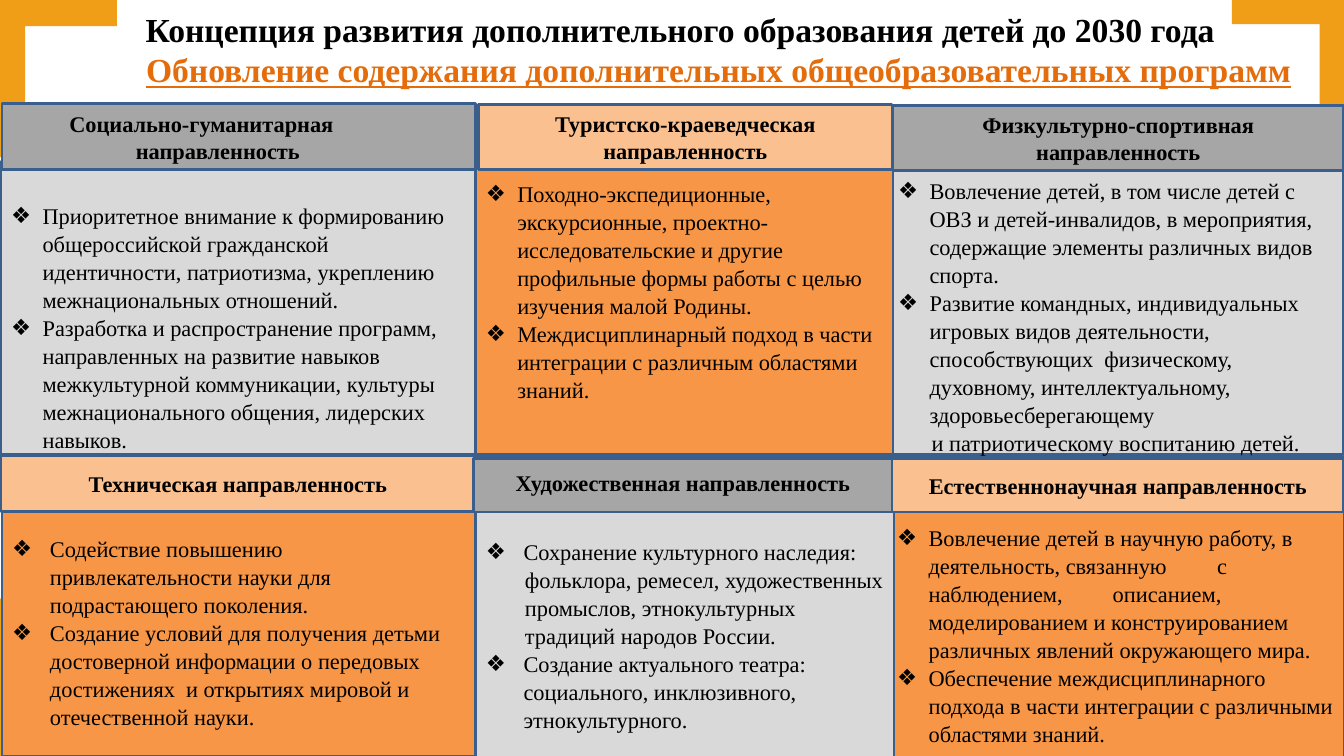
from copy import deepcopy
from dataclasses import dataclass

from lxml import etree
from pptx import Presentation
from pptx.dml.color import RGBColor
from pptx.enum import shapes as sh, text as tx
from pptx.oxml.ns import qn
from pptx.util import Pt


@dataclass(frozen=True)
class Theme:
    font: str = "Times New Roman"
    title_size: float = 24
    text_size: float = 16
    line_width: float = 2
    leading: float = 1.04
    ink: str = "000000"
    accent: str = "E46C0A"
    corner: str = "F09D18"
    border: str = "3A5F8C"
    grey: str = "D9D9D9"
    dark_grey: str = "A6A6A6"
    orange: str = "F79646"
    peach: str = "FAC090"


@dataclass(frozen=True)
class Box:
    left: float
    top: float
    width: float
    height: float


@dataclass(frozen=True)
class Line:
    text: str
    indent: float = 0
    bullet: bool = False
    centred: bool = False
    tabs: tuple[float, ...] = ()


@dataclass(frozen=True)
class Topic:
    header_box: Box
    header: tuple[Line, ...]
    panel_box: Box
    points: tuple[Line, ...]
    warm: bool
    panel_inset: float = 0
    header_lift: float = 0


@dataclass(frozen=True)
class Corner:
    x: float
    y: float
    width: float
    height: float
    post: float
    beam: float


THEME = Theme()
SLIDE_WIDTH, SLIDE_HEIGHT = 960, 540
PANEL_DROP = 38


def centred(text: str) -> tuple[Line, ...]:
    return (Line(text, centred=True),)


def bullet(text: str, indent: float = 22.5, tabs: tuple[float, ...] = ()) -> Line:
    return Line(text, indent, True, tabs=tabs)


CORNERS = (
    Corner(0, SLIDE_HEIGHT, 80, -112.3, 18, -17.3),
    Corner(SLIDE_WIDTH, 0, -80, 112.3, -17.3, 17.3),
    Corner(SLIDE_WIDTH, SLIDE_HEIGHT, -80, -112.3, -15.1, -18.7),
    Corner(0, 0, 83.5, 112.3, 18, 18.7),
)

TOPICS = (
    Topic(
        Box(1.44, 74.2, 338.4, 46.8),
        (Line("Социально-гуманитарная", 41), Line("направленность", 88.5)),
        Box(0.72, 115.2, 340.6, 236.9),
        (bullet("Приоритетное внимание к формированию общероссийской гражданской идентичности, "
                "патриотизма, укреплению межнациональных отношений."),
         bullet("Разработка и распространение программ, направленных на развитие навыков "
                "межкультурной коммуникации, культуры межнационального общения, лидерских навыков.")),
        warm=False),
    Topic(
        Box(637.9, 75.6, 321.8, 46.1),
        centred("Физкультурно-спортивная направленность"),
        Box(634.3, 88.6, 325.4, 236.2),
        (bullet("Вовлечение детей, в том числе детей с ОВЗ и детей-инвалидов, в мероприятия, "
                "содержащие элементы различных видов спорта."),
         bullet("Развитие командных, индивидуальных игровых видов деятельности, способствующих  "
                "физическому, духовному, интеллектуальному, здоровьесберегающему"),
         Line("и патриотическому воспитанию детей.", 24)),
        warm=False, panel_inset=PANEL_DROP),
    Topic(
        Box(342, 74.9, 295.2, 46.1),
        centred("Туристско-краеведческая направленность"),
        Box(339.8, 91.4, 298.1, 233.3),
        (bullet("Походно-экспедиционные, экскурсионные, проектно-исследовательские и другие "
                "профильные формы работы с целью изучения малой Родины."),
         bullet("Междисциплинарный подход в части интеграции с различным областями знаний.")),
        warm=True),
    Topic(
        Box(0.72, 325.4, 338.4, 40.3),
        centred("Техническая направленность"),
        Box(1.44, 324.7, 342, 215.3),
        (bullet("Содействие повышению привлекательности науки для подрастающего поколения.", 27),
         bullet("Создание условий для получения детьми достоверной информации о передовых "
                "достижениях  и открытиях мировой и отечественной науки.", 27)),
        warm=True, panel_inset=PANEL_DROP),
    Topic(
        Box(637.2, 327.6, 322.6, 38.2),
        centred("Естественнонаучная направленность"),
        Box(633.6, 326.9, 326.9, 215.3),
        (bullet("Вовлечение детей в научную работу, в деятельность, связанную\tс наблюдением,\t"
                "описанием, моделированием и конструированием различных явлений окружающего мира.",
                tabs=(154, 228.5)),
         bullet("Обеспечение междисциплинарного подхода в части интеграции с различными "
                "областями знаний.")),
        warm=True, panel_inset=PANEL_DROP),
    Topic(
        Box(338.4, 327.6, 298.8, 38.2),
        centred("Художественная направленность"),
        Box(339.8, 326.9, 298.8, 215.3),
        (bullet("Сохранение культурного наследия:", 27),
         Line("фольклора, ремесел, художественных промыслов, этнокультурных традиций "
              "народов России.", 28),
         bullet("Создание актуального театра: социального, инклюзивного, этнокультурного.", 27)),
        warm=False, panel_inset=PANEL_DROP, header_lift=4),
)


def place(shape, box: Box) -> None:
    shape.left, shape.top = Pt(box.left), Pt(box.top)
    shape.width, shape.height = Pt(box.width), Pt(box.height)


def paint(shape, fill: str, border: str | None = None) -> None:
    shape.fill.solid()
    shape.fill.fore_color.rgb = RGBColor.from_string(fill)
    if border is None:
        shape.line.fill.background()
    else:
        shape.line.color.rgb = RGBColor.from_string(border)
        shape.line.width = Pt(THEME.line_width)


def write(shape, lines: tuple[Line, ...], *, size: float = THEME.text_size, color: str = THEME.ink,
          bold: bool = False, underline: bool = False, leading: float = 1.0,
          top: float = 3.6, bottom: float = 3.6) -> None:
    frame = shape.text_frame
    frame.word_wrap = True
    frame.auto_size = tx.MSO_AUTO_SIZE.NONE
    frame.vertical_anchor = tx.MSO_ANCHOR.MIDDLE
    frame.margin_top, frame.margin_bottom = Pt(top), Pt(bottom)
    for number, line in enumerate(lines):
        paragraph = frame.add_paragraph() if number else frame.paragraphs[0]
        paragraph.alignment = tx.PP_ALIGN.CENTER if line.centred else tx.PP_ALIGN.LEFT
        paragraph.line_spacing = leading
        paragraph.space_before = paragraph.space_after = Pt(0)
        properties = paragraph._p.get_or_add_pPr()
        properties.set("marL", str(Pt(line.indent)))
        properties.set("indent", str(-Pt(line.indent) if line.bullet else 0))
        if line.bullet:
            etree.SubElement(properties, qn("a:buChar")).set("char", "❖")
        else:
            etree.SubElement(properties, qn("a:buNone"))
        if line.tabs:
            stops = etree.SubElement(properties, qn("a:tabLst"))
            for position in line.tabs:
                etree.SubElement(stops, qn("a:tab"), pos=str(Pt(position)), algn="l")
        run = paragraph.add_run()
        run.text = line.text
        run.font.name, run.font.size = THEME.font, Pt(size)
        run.font.bold, run.font.underline = bold, underline
        run.font.color.rgb = RGBColor.from_string(color)


def extend_layout(layout, count: int) -> None:
    body = layout.placeholders[1].element
    for idx in reversed(range(20, 20 + count - 1)):
        extra = deepcopy(body)
        extra.xpath(".//p:cNvPr")[0].set("id", str(idx))
        extra.xpath(".//p:ph")[0].set("idx", str(idx))
        body.addnext(extra)


def draw_corner(slide, corner: Corner, depth: int) -> None:
    outline = ((corner.width, 0), (corner.width, corner.beam), (corner.post, corner.beam),
               (corner.post, corner.height), (0, corner.height))
    builder = slide.shapes.build_freeform(Pt(corner.x), Pt(corner.y))
    builder.add_line_segments([(Pt(corner.x + dx), Pt(corner.y + dy)) for dx, dy in outline])
    bracket = builder.convert_to_shape()
    bracket.shadow.inherit = False
    paint(bracket, THEME.corner)
    slide.shapes.element.insert(2 + depth, bracket.element)


def draw_header(slide, topic: Topic) -> None:
    header = slide.shapes.add_shape(sh.MSO_SHAPE.RECTANGLE, 0, 0, 0, 0)
    header.shadow.inherit = False
    place(header, topic.header_box)
    paint(header, THEME.peach if topic.warm else THEME.dark_grey, THEME.border)
    write(header, topic.header, bold=True, bottom=3.6 + topic.header_lift)


def main() -> None:
    deck = Presentation()
    deck.slide_width, deck.slide_height = Pt(SLIDE_WIDTH), Pt(SLIDE_HEIGHT)
    layout = deck.slide_layouts[1]
    extend_layout(layout, len(TOPICS))
    slide = deck.slides.add_slide(layout)
    title, *panels = slide.placeholders
    for depth, corner in enumerate(CORNERS):
        draw_corner(slide, corner, depth)
    place(title, Box(87, 2.9, 797.8, 36))
    write(title, centred("Концепция развития дополнительного образования детей до 2030 года"),
          size=THEME.title_size, bold=True)
    for panel, topic in zip(panels, TOPICS):
        place(panel, topic.panel_box)
        paint(panel, THEME.orange if topic.warm else THEME.grey, THEME.border)
        write(panel, topic.points, leading=THEME.leading, top=topic.panel_inset, bottom=0)
    for topic in TOPICS:
        draw_header(slide, topic)
    subtitle = slide.shapes.add_textbox(Pt(86.6), Pt(31.7), Pt(853.2), Pt(36))
    write(subtitle, centred("Обновление содержания дополнительных общеобразовательных программ"),
          size=THEME.title_size, color=THEME.accent, bold=True, underline=True)
    deck.save("out.pptx")


if __name__ == "__main__":
    main()
